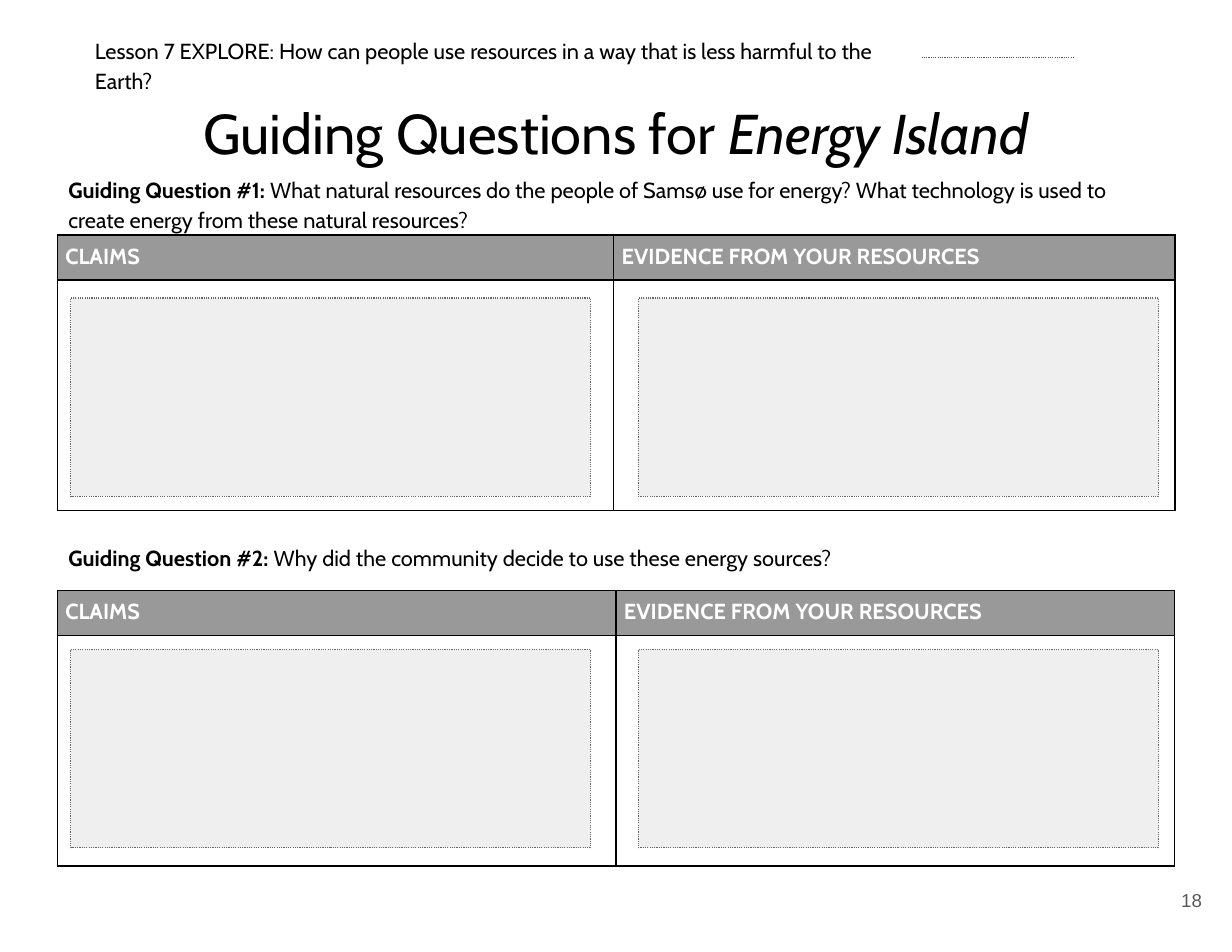
from lxml import etree
from pptx import Presentation
from pptx.dml.color import RGBColor
from pptx.enum.dml import MSO_LINE
from pptx.enum.shapes import MSO_CONNECTOR, MSO_SHAPE
from pptx.enum.text import MSO_ANCHOR, PP_ALIGN
from pptx.oxml import parse_xml
from pptx.oxml.ns import nsdecls, qn
from pptx.util import Cm, Pt

BLACK = RGBColor(0x00, 0x00, 0x00)
WHITE = RGBColor(0xFF, 0xFF, 0xFF)
HEADER_GRAY = RGBColor(0x99, 0x99, 0x99)
ANSWER_GRAY = RGBColor(0xEF, 0xEF, 0xEF)
ANSWER_LINE = RGBColor(0x66, 0x66, 0x66)
DARK_GRAY = RGBColor(0x59, 0x59, 0x59)
DOTTED = MSO_LINE.ROUND_DOT
TOP, MIDDLE = MSO_ANCHOR.TOP, MSO_ANCHOR.MIDDLE
LEFT, CENTER, RIGHT = PP_ALIGN.LEFT, PP_ALIGN.CENTER, PP_ALIGN.RIGHT

HEADERS = ("CLAIMS", "EVIDENCE FROM YOUR RESOURCES")
ROW_HEIGHTS = (1.02, 5.23)
ANSWER_LEFTS = (1.6, 14.48)
ANSWER_SIZE = (11.79, 4.5)
# question box, bold label, question, table top, column widths, answer top
QUESTIONS = (
    ((1.3, 3.68, 24.89, 2.67), "Guiding Question #1:",
     " What natural resources do the people of Samsø use for energy? "
     "What technology is used to create energy from these natural resources?",
     5.33, (12.62, 12.73), 6.76),
    ((1.3, 12.01, 24.69, 1.12), "Guiding Question #2:",
     " Why did the community decide to use these energy sources?",
     13.39, (12.67, 12.67), 14.73),
)


def style_font(font, size, color=BLACK, name="Cabin", bold=False, italic=False):
    font.size = Pt(size)
    font.name = name
    font.color.rgb = color
    font.bold = bold
    font.italic = italic


def add_text(s, box, runs, size, align=LEFT, anchor=TOP, inset=0.25,
             spacing=1.15, color=BLACK, name="Cabin"):
    """Add a one-paragraph text box; runs are (text, bold, italic)."""
    tf = s.shapes.add_textbox(*map(Cm, box)).text_frame
    tf.word_wrap = True
    tf.vertical_anchor = anchor
    tf.margin_left = tf.margin_right = Cm(inset)
    tf.margin_top = tf.margin_bottom = Cm(inset)
    p = tf.paragraphs[0]
    p.alignment = align
    p.line_spacing = spacing
    for text, bold, italic in runs:
        r = p.add_run()
        r.text = text
        style_font(r.font, size, color, name, bold, italic)
    return p


def add_borders(cell):
    tc_pr = cell._tc.get_or_add_tcPr()
    for side in ("lnL", "lnR", "lnT", "lnB"):
        tc_pr.append(parse_xml(
            f'<a:{side} {nsdecls("a")} w="{Pt(1)}"><a:solidFill>'
            f'<a:srgbClr val="{BLACK}"/></a:solidFill></a:{side}>'))


def add_claims_table(s, top, widths):
    table = s.shapes.add_table(2, 2, Cm(1.3), Cm(top), Cm(sum(widths)),
                               Cm(sum(ROW_HEIGHTS))).table
    table.horz_banding = False
    for row, height in zip(table.rows, ROW_HEIGHTS):
        row.height = Cm(height)
    for col, width in zip(table.columns, widths):
        col.width = Cm(width)
    for cell in table.iter_cells():
        cell.margin_left = cell.margin_right = Cm(0.18)
        cell.margin_top = cell.margin_bottom = Cm(0.18)
        add_borders(cell)
        cell.fill.background()
    for cell, header in zip(table.rows[0].cells, HEADERS):
        cell.fill.solid()
        cell.fill.fore_color.rgb = HEADER_GRAY
        cell.text_frame.text = header
        style_font(cell.text_frame.paragraphs[0].runs[0].font, 14, WHITE, bold=True)


def add_answer_box(s, left, top):
    sp = s.shapes.add_shape(MSO_SHAPE.RECTANGLE, Cm(left), Cm(top),
                            *map(Cm, ANSWER_SIZE))
    sp.shadow.inherit = False
    sp.fill.solid()
    sp.fill.fore_color.rgb = ANSWER_GRAY
    sp.line.color.rgb = ANSWER_LINE
    sp.line.width = Pt(0.75)
    sp.line.dash_style = DOTTED


def add_question(s, box, label, question, table_top, widths, answer_top):
    add_text(s, box, [(label, True, False), (question, False, False)], 14)
    add_claims_table(s, table_top, widths)
    for left in ANSWER_LEFTS:
        add_answer_box(s, left, answer_top)


def add_heading(s):
    p = add_text(s, (1.9, 0.74, 19.05, 1.42),
                 [("Lesson 7 EXPLORE: How can people use resources in a way "
                   "that is less harmful to the Earth?", False, False)],
                 14, anchor=MIDDLE)
    p.space_after = Pt(10)
    add_text(s, (0, 1.75, 27.94, 2.06),
             [("Guiding Questions for ", False, False),
              ("Energy Island", False, True)], 36, align=CENTER)
    name_line = s.shapes.add_connector(MSO_CONNECTOR.STRAIGHT, Cm(20.9), Cm(1.3),
                                       Cm(24.38), Cm(1.3))
    name_line.line.color.rgb = DARK_GRAY
    name_line.line.width = Pt(0.75)
    name_line.line.dash_style = DOTTED
    etree.SubElement(name_line._element.spPr, qn("a:effectLst"))


def main():
    prs = Presentation()
    prs.slide_width, prs.slide_height = Cm(27.94), Cm(21.59)
    s = prs.slides.add_slide(prs.slide_layouts[6])
    add_heading(s)
    for question in QUESTIONS:
        add_question(s, *question)
    add_text(s, (25.88, 19.58, 1.68, 1.65), [("18", False, False)], 12,
             align=RIGHT, anchor=MIDDLE, inset=0.3, spacing=1.0,
             color=DARK_GRAY, name="Arial")
    prs.save("out.pptx")


if __name__ == "__main__":
    main()
